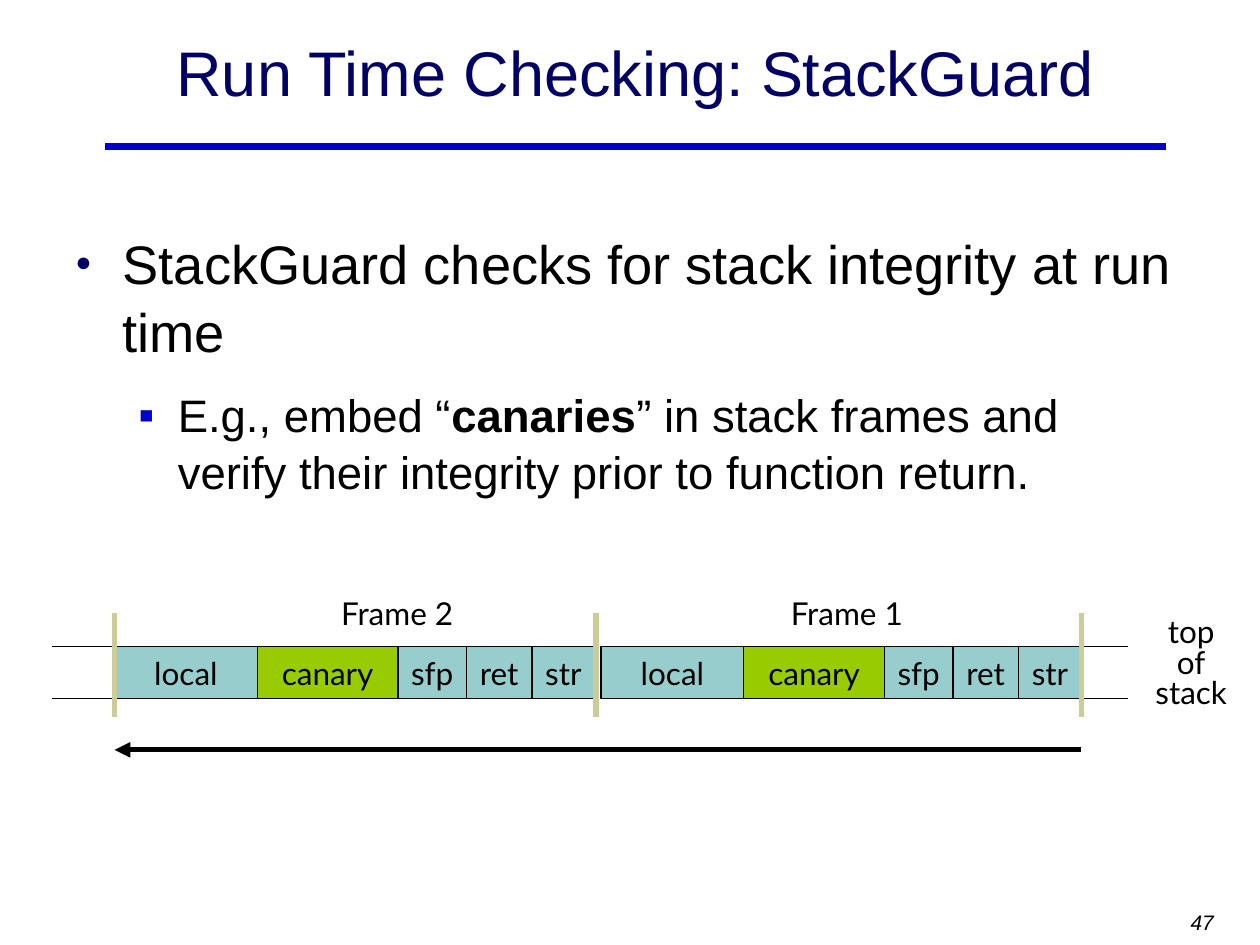
"""Build a slide on StackGuard canaries in stack frames."""
import pptx
import pptx.dml.color
import pptx.enum.shapes
import pptx.enum.text
import pptx.util
from lxml import etree
from pptx.oxml.ns import qn

Pt = pptx.util.Pt
RGB = pptx.dml.color.RGBColor.from_string
ALIGN = pptx.enum.text.PP_ALIGN
ANCHOR = pptx.enum.text.MSO_ANCHOR
COLORS = {
    "title": "000066",
    "rule": "0000CC",
    "ink": "000000",
    "cell": "97CDCC",
    "canary": "99CC00",
    "divider": "CCCC99",
}

deck = pptx.Presentation()
deck.slide_width, deck.slide_height = Pt(720), Pt(540)
slide = deck.slides.add_slide(deck.slide_layouts[6])


def add_line(x1, y1, x2, y2, color, width):
    line = slide.shapes.add_connector(
        pptx.enum.shapes.MSO_CONNECTOR.STRAIGHT, Pt(x1), Pt(y1), Pt(x2), Pt(y2))
    line.line.color.rgb = RGB(COLORS[color])
    line.line.width = Pt(width)
    etree.SubElement(line._element.spPr, qn("a:effectLst"))
    return line


def add_label(text, left, top, width, height, font, size, color="ink", wrap=False):
    box = slide.shapes.add_textbox(Pt(left), Pt(top), Pt(width), Pt(height))
    box.text_frame.word_wrap = wrap
    box.text_frame.text = text
    paragraph = box.text_frame.paragraphs[0]
    paragraph.alignment = ALIGN.CENTER
    paragraph.font.name = font
    paragraph.font.size = Pt(size)
    paragraph.font.color.rgb = RGB(COLORS[color])
    return box


add_line(60, 84, 666, 84, "rule", 4)
title = add_label("Run Time Checking: StackGuard", 60, 12, 606, 54, "Arial", 36, "title", True)
title.text_frame.vertical_anchor = ANCHOR.BOTTOM
page_number = add_label("47", 624, 516, 126, 36, "Arial", 12, wrap=True)
page_number.text_frame.paragraphs[0].font.italic = True

body = slide.shapes.add_textbox(Pt(36), Pt(126), Pt(644), Pt(390)).text_frame
body.word_wrap = True
points = [
    (["StackGuard checks for stack integrity at run time"], 31, 27, 27, "●", "title", 50),
    (["E.g., embed “", "canaries", "” in stack frames and verify their integrity "
      "prior to function return."], 26, 58.5, 22.5, "▪", "rule", 100),
]
for level, (pieces, size, margin, hang, bullet, color, percent) in enumerate(points):
    point = body.add_paragraph() if level else body.paragraphs[0]
    point.level = level
    point.line_spacing = 1.05
    if level:
        point.space_before = Pt(12)
    properties = point._p.get_or_add_pPr()
    properties.set("marL", str(Pt(margin)))
    properties.set("indent", str(-Pt(hang)))
    bullet_color = etree.SubElement(properties, qn("a:buClr"))
    etree.SubElement(bullet_color, qn("a:srgbClr"), val=COLORS[color])
    etree.SubElement(properties, qn("a:buSzPct"), val=str(percent * 1000))
    etree.SubElement(properties, qn("a:buFont"), typeface="Arial")
    etree.SubElement(properties, qn("a:buChar"), char=bullet)
    point.font.name = "Arial"
    point.font.size = Pt(size)
    point.font.color.rgb = RGB(COLORS["ink"])
    for piece in pieces:
        run = point.add_run()
        run.text = piece
        if piece == "canaries":
            run.font.bold = True

stack_left, stack_right, frame_pitch = 65.5, 618, 278
stack_top, stack_height = 369.5, 29.5
fields = [("local", 81.5), ("canary", 80.5), ("sfp", 39), ("ret", 37.5), ("str", 36)]
for frame, caption_left in enumerate([187, 444]):
    add_label(f"Frame {2 - frame}", caption_left, 336, 80, 29, "Lato", 18)
    field_left = stack_left + frame * frame_pitch
    for name, width in fields:
        field = slide.shapes.add_shape(
            pptx.enum.shapes.MSO_SHAPE.RECTANGLE,
            Pt(field_left), Pt(stack_top), Pt(width), Pt(stack_height))
        field.shadow.inherit = False
        field.fill.solid()
        field.fill.fore_color.rgb = RGB(COLORS["canary" if name == "canary" else "cell"])
        field.line.color.rgb = RGB(COLORS["ink"])
        field.line.width = Pt(0.75)
        field.text_frame.word_wrap = False
        field.text_frame.vertical_anchor = ANCHOR.MIDDLE
        field.text_frame.text = name
        label = field.text_frame.paragraphs[0]
        label.alignment = ALIGN.CENTER
        label.font.name = "Lato"
        label.font.size = Pt(18)
        label.font.color.rgb = RGB(COLORS["ink"])
        field_left += width

for edge_y in (stack_top, stack_top + stack_height):
    add_line(stack_left, edge_y, 30, edge_y, "ink", 0.75)
    add_line(stack_right, edge_y, 644.5, edge_y, "ink", 0.75)
for divider_x in (stack_left, 340.5, stack_right):
    add_line(divider_x, 350.5, divider_x, 409.5, "divider", 3)

growth = add_line(stack_right, 428.5, stack_left, 428.5, "ink", 3)
etree.SubElement(growth.line._get_or_add_ln(), qn("a:tailEnd"), type="triangle")

stack_end = add_label("top\vof\vstack", 653, 350.5, 55.5, 59, "Lato", 18)
stack_end.text_frame.paragraphs[0].line_spacing = 0.8

deck.save("out.pptx")
